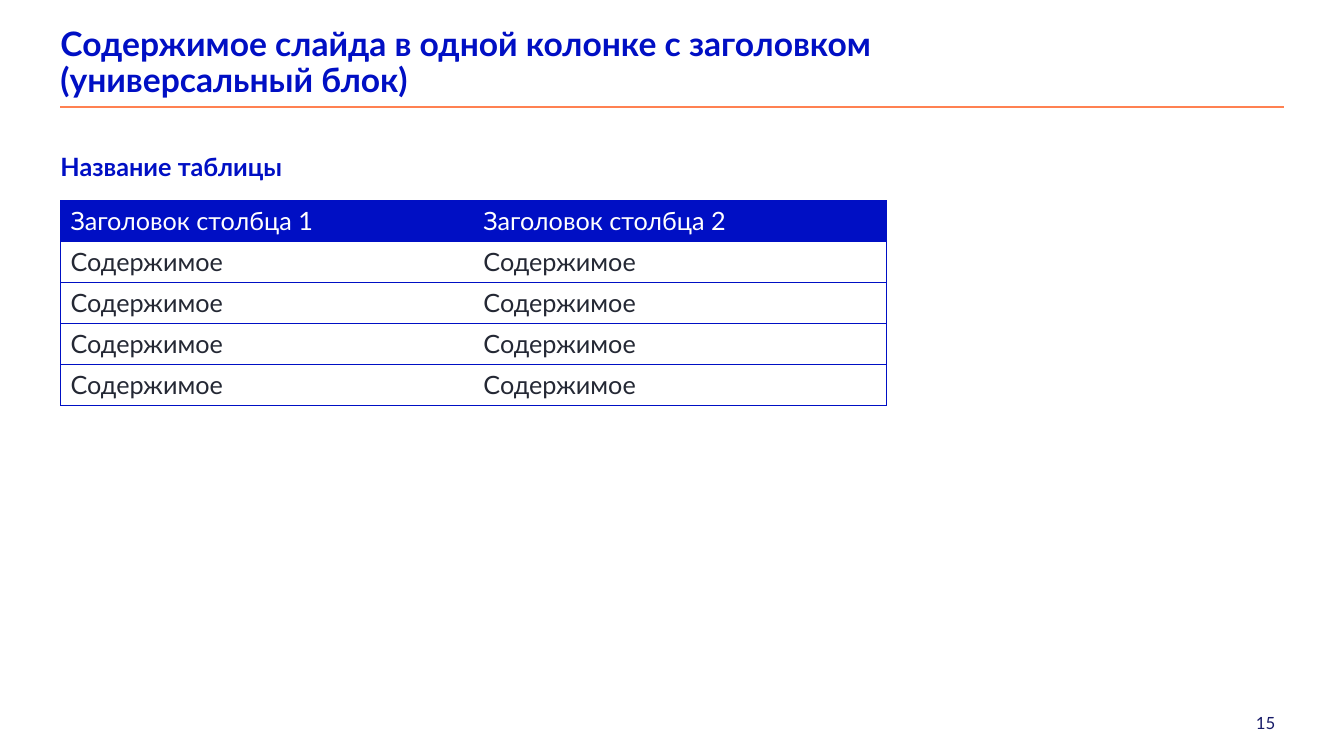
"""Build a slide with a title, a named two-column table and a page number."""
from dataclasses import dataclass

from lxml import etree
from pptx import Presentation
from pptx.dml.color import RGBColor
from pptx.enum.text import MSO_ANCHOR, MSO_AUTO_SIZE, PP_ALIGN
from pptx.enum.shapes import MSO_CONNECTOR
from pptx.oxml.ns import qn
from pptx.util import Inches, Pt

LEFT, RIGHT = PP_ALIGN.LEFT, PP_ALIGN.RIGHT
TOP, MIDDLE = MSO_ANCHOR.TOP, MSO_ANCHOR.MIDDLE
FIXED, GROW = MSO_AUTO_SIZE.NONE, MSO_AUTO_SIZE.SHAPE_TO_FIT_TEXT
STRAIGHT = MSO_CONNECTOR.STRAIGHT


@dataclass(frozen=True)
class Theme:
    font: str = "Lato"
    blue: str = "000FC4"
    navy: str = "171B68"
    dark: str = "242834"
    white: str = "FFFFFF"
    orange: str = "FF8151"
    title_size: int = 24
    body_size: int = 18
    page_size: int = 12
    border: float = 0.5
    rule: float = 1.25


@dataclass(frozen=True)
class TextSpec:
    text: str
    box: tuple[float, float, float, float]
    size: int
    color: str
    bold: bool
    frame: dict
    paragraph: dict


THEME = Theme()
TITLE = TextSpec(
    "Содержимое слайда в одной колонке с заголовком (универсальный блок)",
    (0.6, 0.45, 10.51, 0.36), THEME.title_size, THEME.blue, True,
    {"vertical_anchor": MIDDLE, "auto_size": GROW},
    {"alignment": LEFT, "line_spacing": 0.9})
TABLE_NAME = TextSpec(
    "Название таблицы", (0.6, 1.47, 8.18, 0.69), THEME.body_size, THEME.blue, True,
    {"vertical_anchor": TOP, "auto_size": FIXED},
    {"level": 1, "alignment": LEFT, "line_spacing": 1.1,
     "space_before": Pt(0), "space_after": Pt(12)})
PAGE = TextSpec(
    "15", (10.23, 7.07, 2.42, 0.2), THEME.page_size, THEME.navy, False,
    {"vertical_anchor": TOP, "auto_size": GROW}, {"alignment": RIGHT})
HEADERS = ["Заголовок столбца 1", "Заголовок столбца 2"]
ROWS = [HEADERS] + [["Содержимое"] * len(HEADERS)] * 4
TABLE_BOX = (0.6, 1.99, 8.19, 2.03)


def apply(target, values: dict) -> None:
    for name, value in values.items():
        setattr(target, name, value)


def style_font(font, size: int, color: str, bold: bool) -> None:
    apply(font, {"name": THEME.font, "size": Pt(size), "bold": bold})
    font.color.rgb = RGBColor.from_string(color)


def fill_text(sp, spec: TextSpec) -> None:
    sp.left, sp.top, sp.width, sp.height = map(Inches, spec.box)
    tf = sp.text_frame
    margins = dict.fromkeys(
        ("margin_left", "margin_top", "margin_right", "margin_bottom"), 0)
    apply(tf, {"word_wrap": True, **margins, **spec.frame})
    p = tf.paragraphs[0]
    apply(p, spec.paragraph)
    r = p.add_run()
    r.text = spec.text
    style_font(r.font, spec.size, spec.color, spec.bold)


def remove_bullet(p) -> None:
    pPr = p._p.get_or_add_pPr()
    pPr.set("marL", "0")
    pPr.set("indent", "0")
    etree.SubElement(pPr, qn("a:buNone"))


def set_borders(cell, visible: str) -> None:
    tcPr = cell._tc.get_or_add_tcPr()
    for i, side in enumerate("LRTB"):
        ln = etree.Element(qn(f"a:ln{side}"), w=str(Pt(THEME.border)))
        if side in visible:
            fill = etree.SubElement(ln, qn("a:solidFill"))
            etree.SubElement(fill, qn("a:srgbClr"), val=THEME.blue)
        else:
            etree.SubElement(ln, qn("a:noFill"))
        tcPr.insert(i, ln)


def add_content_table(s) -> None:
    frame = s.shapes.add_table(len(ROWS), len(HEADERS), *map(Inches, TABLE_BOX))
    table = frame.table
    apply(table, {"first_row": False, "horz_banding": False})
    for i, row in enumerate(ROWS):
        for j, text in enumerate(row):
            cell = table.cell(i, j)
            if i == 0:
                cell.fill.solid()
                cell.fill.fore_color.rgb = RGBColor.from_string(THEME.blue)
            else:
                cell.fill.background()
            set_borders(cell, "LTB" if j == 0 else "RTB")
            r = cell.text_frame.paragraphs[0].add_run()
            r.text = text
            color = THEME.white if i == 0 else THEME.dark
            style_font(r.font, THEME.body_size, color, False)


def add_rule(s) -> None:
    line = s.shapes.add_connector(
        STRAIGHT, Inches(0.6), Inches(1.06), Inches(12.73), Inches(1.06))
    line.line.color.rgb = RGBColor.from_string(THEME.orange)
    line.line.width = Pt(THEME.rule)
    etree.SubElement(line._element.spPr, qn("a:effectLst"))


def main() -> None:
    prs = Presentation()
    prs.slide_width, prs.slide_height = Inches(13.33), Inches(7.5)
    s = prs.slides.add_slide(prs.slide_layouts[1])
    add_rule(s)
    fill_text(s.shapes.add_textbox(0, 0, 0, 0), PAGE)
    fill_text(s.shapes.title, TITLE)
    add_content_table(s)
    body = s.placeholders[1]
    fill_text(body, TABLE_NAME)
    remove_bullet(body.text_frame.paragraphs[0])
    prs.save("out.pptx")


if __name__ == "__main__":
    main()
